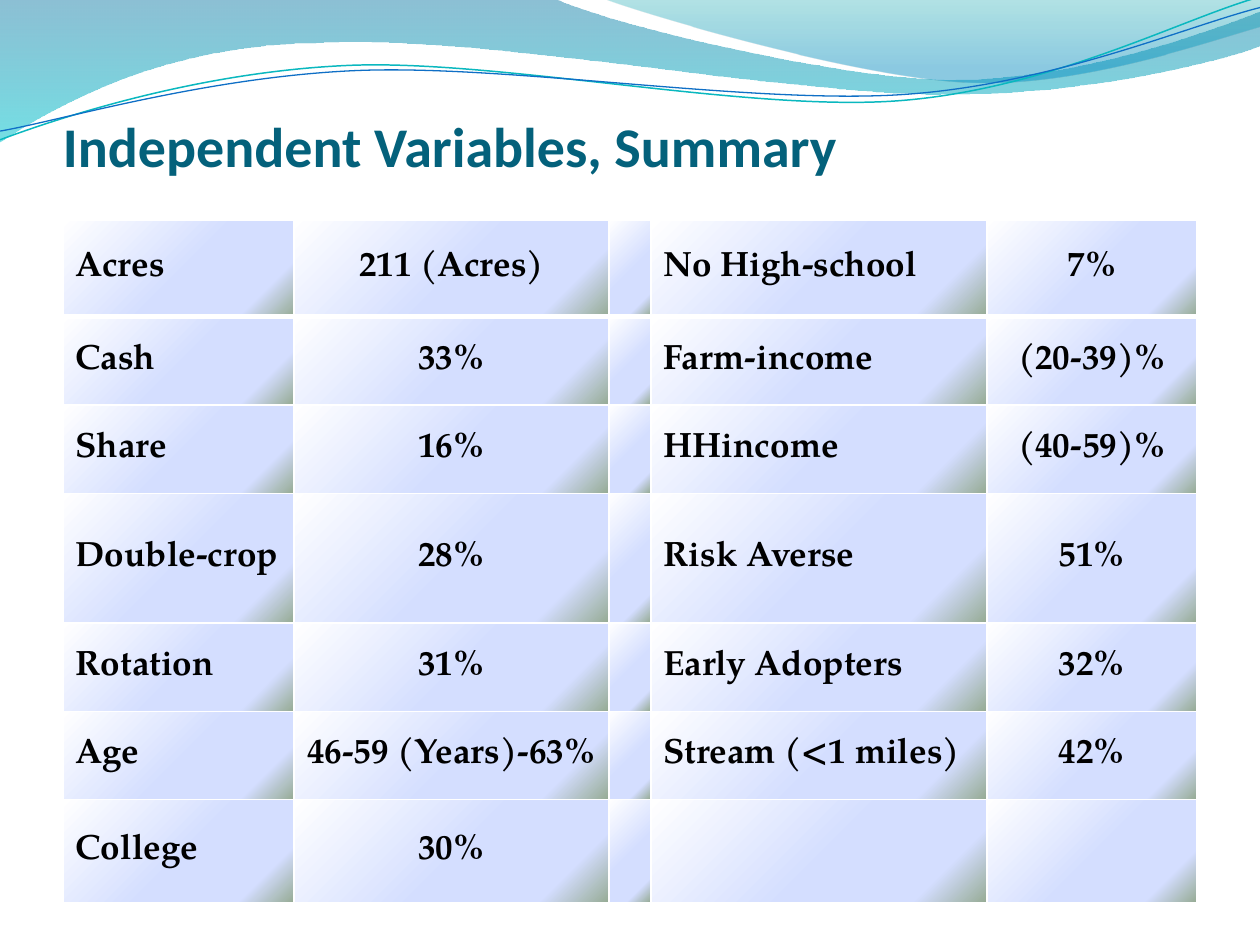
from lxml import etree
from pptx import Presentation
from pptx.dml.color import RGBColor
from pptx.enum.text import MSO_ANCHOR, PP_ALIGN
from pptx.oxml.ns import qn
from pptx.util import Pt

MIDDLE, BOTTOM = MSO_ANCHOR.MIDDLE, MSO_ANCHOR.BOTTOM
LEFT, CENTER = PP_ALIGN.LEFT, PP_ALIGN.CENTER

COLORS = {
    "title": "04617B", "text": "000000", "border": "FFFFFF",
    "teal_line": "0AB8BF", "blue_line": "0F6FC6",
}
TITLE_FONT, TABLE_FONT = "Calibri", "TeX Gyre Pagella"

# Gradient stops: position in percent, colour, opacity in percent
BAND_STOPS = [(0, "0074A1", 45), (100, "00C6CF", 55)]
CREST_STOPS = [(0, "00A1A9", 30), (80, "008BBF", 45)]
CELL_STOPS = [(0, "FFFFFF", 100), (53, "D4DEFF", 100),
              (83, "D4DEFF", 100), (100, "96AB94", 100)]

# Outlines in points: a pair is a straight segment, six numbers a Bezier curve
BAND = [(0, -0.7), (317, -0.7),
        (342.7, 12.2, 478.1, 45.4, 545.8, 45.4),
        (614.2, 45.4, 689.8, 18.7, 720, 6.5), (720.7, 25.9),
        (707.8, 31.7, 626.4, 54.7, 537.1, 54),
        (447.8, 54, 275, 20.2, 185, 24.5),
        (92.9, 25.2, 33.1, 59.8, -0.7, 81.4), (0, -0.7)]
CREST = [(344.9, -0.7),
         (366.5, 7.9, 491, 44.6, 553.7, 46.8),
         (616.3, 49.7, 691.9, 23, 720, 15.1), (720, 0), (344.9, -0.7)]
TEAL_WAVE = [(0, 79.9),
             (34.6, 67, 113.8, 41, 199.4, 37.4),
             (284.4, 33.8, 427, 64.1, 513.4, 57.6),
             (599.8, 51.1, 675.4, 10.8, 718.6, -1.4)]
BLUE_WAVE = [(0, 74.9),
             (33.8, 69.1, 118.1, 43.9, 203.8, 40.3),
             (290.2, 36.7, 429.8, 59.8, 516.2, 54),
             (601.9, 48.2, 677.5, 15.1, 720, 4.3)]

COLUMN_WIDTHS = [132, 180, 24, 192, 120]
ROW_HEIGHTS = [55, 50.5, 50.5, 74, 50.5, 50.5, 59]
ROWS = [
    ("Acres", "211 (Acres)", "", "No High-school", "7%"),
    ("Cash", "33%", "", "Farm-income", "(20-39)%"),
    ("Share", "16%", "", "HHincome", "(40-59)%"),
    ("Double-crop", "28%", "", "Risk Averse", "51%"),
    ("Rotation", "31%", "", "Early Adopters", "32%"),
    ("Age", "46-59 (Years)-63%", "", "Stream (<1 miles)", "42%"),
    ("College", "30%", "", "", ""),
]
VALUE_COLUMNS = (1, 4)


def add_solid_color(parent, color):
    return etree.SubElement(parent, qn("a:srgbClr"), val=color)


def set_gradient(fill, properties, stops, angle):
    """Swap an empty fill for a linear gradient."""
    fill.background()
    empty_fill = properties.find(qn("a:noFill"))
    gradient = etree.Element(qn("a:gradFill"), rotWithShape="1")
    stop_list = etree.SubElement(gradient, qn("a:gsLst"))
    for position, color, opacity in stops:
        stop = etree.SubElement(stop_list, qn("a:gs"), pos=str(position * 1000))
        color_element = add_solid_color(stop, color)
        if opacity < 100:
            etree.SubElement(color_element, qn("a:alpha"), val=str(opacity * 1000))
    etree.SubElement(gradient, qn("a:lin"), ang=str(angle * 60000), scaled="0")
    properties.replace(empty_fill, gradient)


def pairs(segment):
    return list(zip(segment[::2], segment[1::2]))


def curve_points(controls, steps=24):
    """Points along a cubic Bezier curve, used to measure its extent."""
    for step in range(1, steps + 1):
        t = step / steps
        weights = ((1 - t) ** 3, 3 * t * (1 - t) ** 2, 3 * t * t * (1 - t), t ** 3)
        yield tuple(sum(w * control[axis] for w, control in zip(weights, controls))
                    for axis in (0, 1))


def trace(segments):
    points = [segments[0]]
    for segment in segments[1:]:
        if len(segment) == 2:
            points.append(segment)
        else:
            points.extend(curve_points([points[-1]] + pairs(segment)))
    return points


def write_curves(shape, segments, closed):
    """Give the shape's outline true curves in place of its measured points."""
    outline = next(shape._element.iter(qn("a:path")))
    for child in list(outline):
        outline.remove(child)
    for index, segment in enumerate(segments):
        tag = "a:moveTo" if index == 0 else "a:lnTo" if len(segment) == 2 else "a:cubicBezTo"
        command = etree.SubElement(outline, qn(tag))
        for x, y in pairs(segment):
            etree.SubElement(command, qn("a:pt"), x=str(Pt(x) - shape.left),
                             y=str(Pt(y) - shape.top))
    if closed:
        etree.SubElement(outline, qn("a:close"))


def add_outline(slide, segments, closed):
    points = [(Pt(x), Pt(y)) for x, y in trace(segments)]
    builder = slide.shapes.build_freeform(*points[0])
    builder.add_line_segments(points[1:], close=closed)
    shape = builder.convert_to_shape()
    write_curves(shape, segments, closed)
    shape.shadow.inherit = False
    return shape


def add_wave_area(slide, segments, stops):
    shape = add_outline(slide, segments, True)
    set_gradient(shape.fill, shape._element.spPr, stops, 90)
    shape.line.fill.background()


def add_wave_line(slide, segments, color, width):
    shape = add_outline(slide, segments, False)
    shape.fill.background()
    shape.line.color.rgb = RGBColor.from_string(color)
    shape.line.width = Pt(width)


def add_text(paragraph, text, font, size, color):
    run = paragraph.add_run()
    run.text = text
    run.font.name = font
    run.font.size = Pt(size)
    run.font.bold = True
    run.font.color.rgb = RGBColor.from_string(color)


def add_title(slide, text):
    box = slide.shapes.add_textbox(Pt(36), Pt(55.2), Pt(648), Pt(46.8))
    frame = box.text_frame
    frame.word_wrap = True
    frame.vertical_anchor = BOTTOM
    frame.margin_left = frame.margin_right = frame.margin_bottom = 0
    frame.margin_top = Pt(3.6)
    add_text(frame.paragraphs[0], text, TITLE_FONT, 32, COLORS["title"])


def set_borders(cell, top, bottom):
    properties = cell._tc.get_or_add_tcPr()
    for side, width in (("L", 1), ("R", 1), ("T", top), ("B", bottom)):
        border = etree.SubElement(properties, qn(f"a:ln{side}"), w=str(Pt(width)))
        add_solid_color(etree.SubElement(border, qn("a:solidFill")), COLORS["border"])


def add_summary_table(slide):
    frame = slide.shapes.add_table(len(ROWS), len(COLUMN_WIDTHS), Pt(36), Pt(126),
                                   Pt(sum(COLUMN_WIDTHS)), Pt(sum(ROW_HEIGHTS)))
    table = frame.table
    table.horz_banding = table.first_row = False
    for column, width in zip(table.columns, COLUMN_WIDTHS):
        column.width = Pt(width)
    for row_index, texts in enumerate(ROWS):
        table.rows[row_index].height = Pt(ROW_HEIGHTS[row_index])
        for column_index, text in enumerate(texts):
            cell = table.cell(row_index, column_index)
            cell.vertical_anchor = MIDDLE
            # The rule under the first row is thicker
            set_borders(cell, 3 if row_index == 1 else 1, 3 if row_index == 0 else 1)
            set_gradient(cell.fill, cell._tc.tcPr, CELL_STOPS, 45)
            paragraph = cell.text_frame.paragraphs[0]
            paragraph.alignment = CENTER if column_index in VALUE_COLUMNS else LEFT
            if text:
                add_text(paragraph, text, TABLE_FONT, 20, COLORS["text"])


def main():
    presentation = Presentation()
    presentation.slide_width, presentation.slide_height = Pt(720), Pt(540)
    slide = presentation.slides.add_slide(presentation.slide_layouts[6])

    # Waves along the top
    add_wave_area(slide, BAND, BAND_STOPS)
    add_wave_area(slide, CREST, CREST_STOPS)
    add_wave_line(slide, TEAL_WAVE, COLORS["teal_line"], 0.85)
    add_wave_line(slide, BLUE_WAVE, COLORS["blue_line"], 0.75)

    # Title and table
    add_title(slide, "Independent Variables, Summary")
    add_summary_table(slide)

    presentation.save("out.pptx")


if __name__ == "__main__":
    main()
